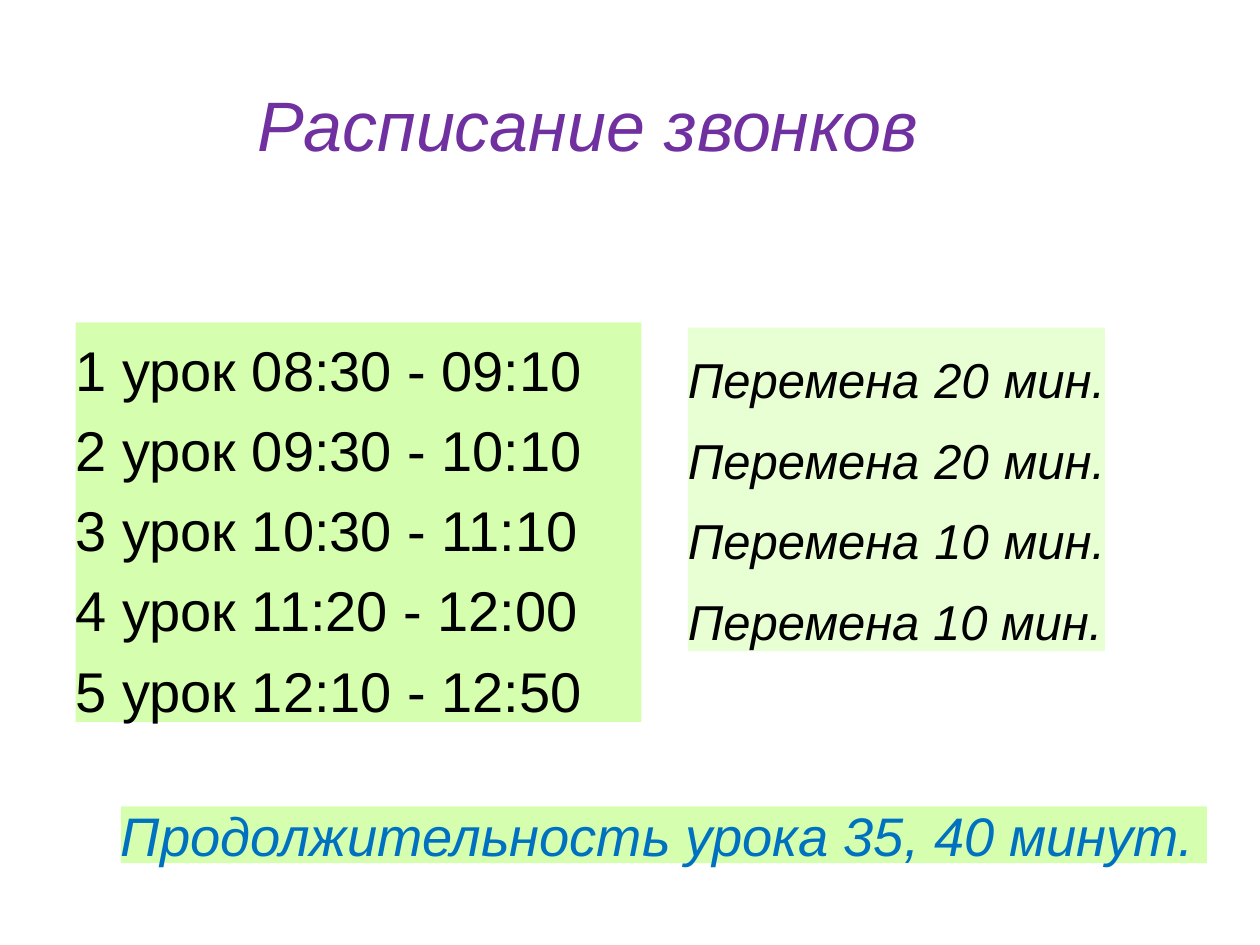
import pptx
import pptx.util
import pptx.dml.color
import pptx.enum.shapes
import pptx.enum.text

Pt = pptx.util.Pt
RGBColor = pptx.dml.color.RGBColor
PP_ALIGN = pptx.enum.text.PP_ALIGN

colors = {
    "title": "7030A0",
    "text": "000000",
    "duration": "0070C0",
    "green": "D5FFAE",
    "pale_green": "E7FFD3",
}

lessons = [
    "1 урок 08:30 - 09:10",
    "2 урок 09:30 - 10:10",
    "3 урок 10:30 - 11:10",
    "4 урок 11:20 - 12:00",
    "5 урок 12:10 - 12:50",
]
breaks = " ".join(f"Перемена {minutes} мин." for minutes in (20, 20, 10, 10))

blocks = [
    {"box": (146.9, 42.5, 416.9, 95.8), "fill": None, "lines": ["Расписание звонков"],
     "color": "title", "size": 40, "italic": True, "spacing": 52.3, "align": PP_ALIGN.LEFT},
    {"box": (43.2, 184.3, 323.3, 228.2), "fill": "green", "lines": lessons,
     "color": "text", "size": 32, "italic": False, "spacing": 45.8, "align": PP_ALIGN.LEFT},
    {"box": (393.1, 187.2, 238.3, 185), "fill": "pale_green", "lines": [breaks],
     "color": "text", "size": 28, "italic": True, "spacing": 46.1, "align": PP_ALIGN.JUSTIFY},
    {"box": (69.1, 460.8, 620.6, 32.4), "fill": "green",
     "lines": ["Продолжительность урока 35, 40 минут."],
     "color": "duration", "size": 31, "italic": True, "spacing": 34.6, "align": PP_ALIGN.LEFT},
]

frame_format = {
    "margin_left": 0,
    "margin_top": 0,
    "margin_right": 0,
    "margin_bottom": 0,
    "word_wrap": True,
    "vertical_anchor": pptx.enum.text.MSO_ANCHOR.TOP,
}

presentation = pptx.Presentation()
presentation.slide_width = Pt(720)
presentation.slide_height = Pt(540)
slide = presentation.slides.add_slide(presentation.slide_layouts[6])

for block in blocks:
    box = [Pt(length) for length in block["box"]]
    if block["fill"]:
        shape = slide.shapes.add_shape(pptx.enum.shapes.MSO_SHAPE.RECTANGLE, *box)
        shape.shadow.inherit = False
        shape.fill.solid()
        shape.fill.fore_color.rgb = RGBColor.from_string(colors[block["fill"]])
        shape.line.fill.background()
    else:
        shape = slide.shapes.add_textbox(*box)

    frame = shape.text_frame
    for name, value in frame_format.items():
        setattr(frame, name, value)
    frame.text = "\n".join(block["lines"])

    paragraph_format = {"alignment": block["align"], "line_spacing": Pt(block["spacing"])}
    font_format = {"name": "Arial", "size": Pt(block["size"]), "italic": block["italic"]}
    for paragraph in frame.paragraphs:
        for name, value in paragraph_format.items():
            setattr(paragraph, name, value)
        font = paragraph.runs[0].font
        for name, value in font_format.items():
            setattr(font, name, value)
        font.color.rgb = RGBColor.from_string(colors[block["color"]])

presentation.save("out.pptx")
